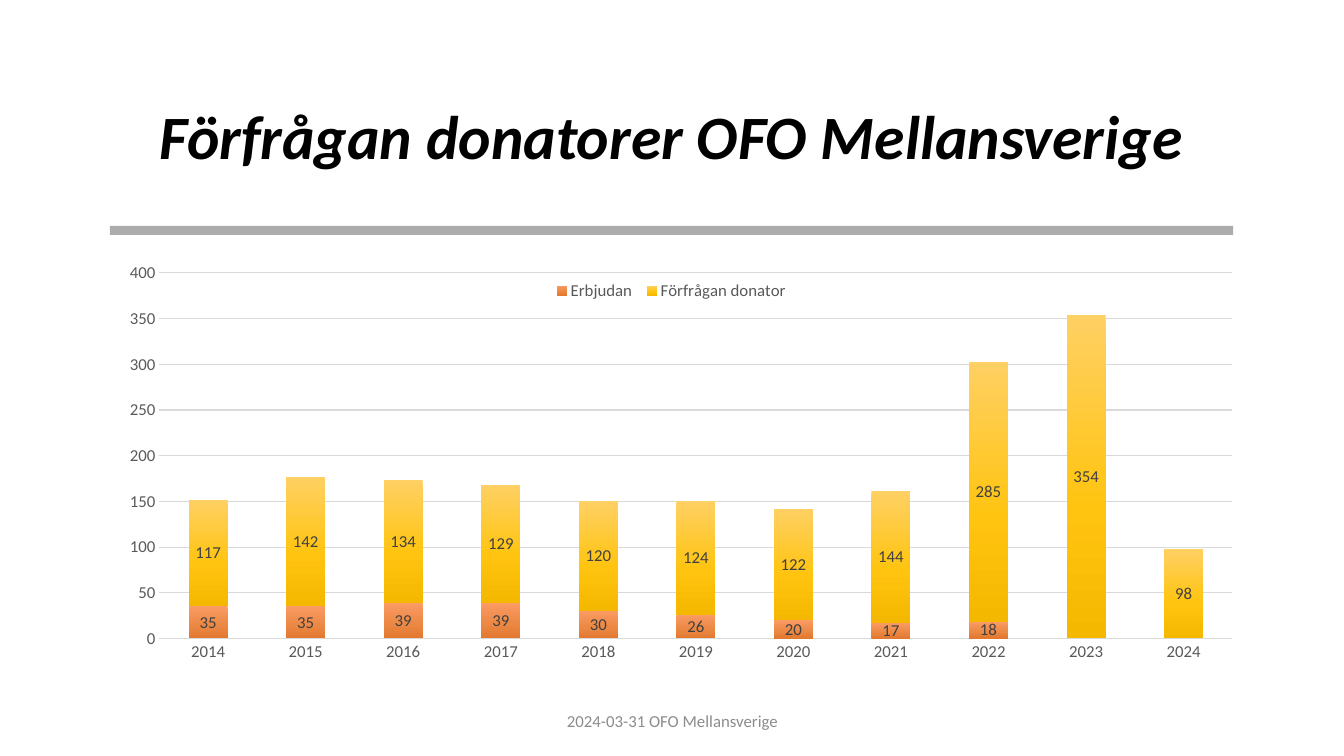
from copy import deepcopy
from dataclasses import dataclass

from lxml.etree import SubElement
from pptx import Presentation
from pptx.chart.data import CategoryChartData
from pptx.dml.color import RGBColor
from pptx.enum.chart import XL_CHART_TYPE as ChartType
from pptx.enum.chart import XL_LABEL_POSITION as LabelPosition
from pptx.enum.chart import XL_LEGEND_POSITION as LegendPosition
from pptx.enum.chart import XL_TICK_MARK as TickMark
from pptx.enum.shapes import MSO_SHAPE as ShapeType
from pptx.enum.text import MSO_ANCHOR as Anchor
from pptx.enum.text import MSO_AUTO_SIZE as AutoSize
from pptx.enum.text import PP_ALIGN as Align
from pptx.oxml import parse_xml
from pptx.oxml.ns import nsdecls, qn
from pptx.util import Inches, Pt

WIDTH, HEIGHT = Inches(13.33), Inches(7.5)
FONT = "Calibri"
GRID_COLOR, AXIS_TEXT, LABEL_TEXT = "D9D9D9", "595959", "404040"
YEARS = [str(year) for year in range(2014, 2025)]


@dataclass(frozen=True)
class Area:
    left: float
    top: float
    width: float
    height: float

    def on_slide(self) -> tuple[int, int, int, int]:
        return (int(self.left * WIDTH), int(self.top * HEIGHT),
                int(self.width * WIDTH), int(self.height * HEIGHT))


@dataclass(frozen=True)
class Stack:
    name: str
    values: tuple
    gradient: tuple[tuple[float, str], ...]


TITLE_AREA = Area(0.0713, 0.088, 0.8575, 0.1933)
RULE_AREA = Area(0.0818, 0.2987, 0.8357, 0.012)
CHART_AREA = Area(0.0818, 0.348, 0.8357, 0.528)
FOOTER_AREA = Area(0.3316, 0.9267, 0.3376, 0.0533)
PLOT_AREA = Area(0.044, 0.018, 0.956, 0.923)
LEGEND_AREA = Area(0.39, 0.03, 0.22, 0.065)

STACKS = [
    Stack("Erbjudan", (35, 35, 39, 39, 30, 26, 20, 17, 18, None, None),
          ((0, "FB9B64"), (0.6, "EB8844"), (1, "E3782F"))),
    Stack("Förfrågan donator", (117, 142, 134, 129, 120, 124, 122, 144, 285, 354, 98),
          ((0, "FFD063"), (0.6, "FFC410"), (1, "F5B800"))),
]


def color(value: str) -> RGBColor:
    return RGBColor.from_string(value)


def style_font(font, size: float, value: str, strong: bool = False) -> None:
    font.name = FONT
    font.size = Pt(size)
    font.color.rgb = color(value)
    font.bold = font.italic = strong


def write_text(shape, area: Area, text: str, size: float, value: str, strong: bool = False):
    shape.left, shape.top, shape.width, shape.height = area.on_slide()
    frame = shape.text_frame
    frame.text = text
    frame.word_wrap = True
    frame.auto_size = AutoSize.NONE
    frame.vertical_anchor = Anchor.MIDDLE
    paragraph = frame.paragraphs[0]
    paragraph.alignment = Align.CENTER
    style_font(paragraph.runs[0].font, size, value, strong)
    return paragraph


def add_rule(slide) -> None:
    rule = slide.shapes.add_shape(ShapeType.RECTANGLE, *RULE_AREA.on_slide())
    rule.shadow.inherit = False
    rule.fill.solid()
    rule.fill.fore_color.rgb = color("808080")
    rule.line.fill.background()
    solid = rule.fill._xPr.find(qn("a:solidFill"))
    SubElement(solid[0], qn("a:alpha"), val="65000")


def manual_layout(area: Area, target: str = ""):
    parts = [("xMode", "edge"), ("yMode", "edge"), ("x", area.left),
             ("y", area.top), ("w", area.width), ("h", area.height)]
    if target:
        parts.insert(0, ("layoutTarget", target))
    inner = "".join(f'<c:{tag} val="{value}"/>' for tag, value in parts)
    return parse_xml(f'<c:layout {nsdecls("c")}><c:manualLayout>{inner}'
                     "</c:manualLayout></c:layout>")


def place_plot(chart) -> None:
    plot_area = chart._chartSpace.find(".//" + qn("c:plotArea"))
    for layout in plot_area.findall(qn("c:layout")):
        plot_area.remove(layout)
    plot_area.insert(0, manual_layout(PLOT_AREA, "inner"))


def style_legend(chart) -> None:
    chart.has_legend = True
    legend = chart.legend
    legend.position = LegendPosition.TOP
    legend.include_in_layout = False
    style_font(legend.font, 12, AXIS_TEXT)
    element = legend._element
    for layout in element.findall(qn("c:layout")):
        element.remove(layout)
    element.find(qn("c:legendPos")).addnext(manual_layout(LEGEND_AREA))


def style_axes(chart) -> None:
    for axis in (chart.category_axis, chart.value_axis):
        axis.major_tick_mark = axis.minor_tick_mark = TickMark.NONE
        style_font(axis.tick_labels.font, 12, AXIS_TEXT)
    category_line = chart.category_axis.format.line
    category_line.color.rgb = color(GRID_COLOR)
    category_line.width = Pt(1)
    values = chart.value_axis
    values.minimum_scale, values.maximum_scale, values.major_unit = 0, 400, 50
    values.format.line.fill.background()
    values.has_major_gridlines = True
    grid_line = values.major_gridlines.format.line
    grid_line.color.rgb = color(GRID_COLOR)
    grid_line.width = Pt(0.75)


def style_series(series, stack: Stack) -> None:
    fill = series.format.fill
    fill.gradient()
    fill.gradient_angle = 270
    stop_list = series._element.find(".//" + qn("a:gsLst"))
    while len(stop_list) < len(stack.gradient):
        stop_list.append(deepcopy(stop_list[0]))
    for stop, (position, value) in zip(fill.gradient_stops, stack.gradient):
        stop.position = position
        stop.color.rgb = color(value)
    labels = series.data_labels
    labels.show_value = True
    labels.position = LabelPosition.CENTER
    style_font(labels.font, 12, LABEL_TEXT)


def add_donor_chart(slide) -> None:
    data = CategoryChartData()
    data.categories = YEARS
    for stack in STACKS:
        data.add_series(stack.name, stack.values)
    frame = slide.shapes.add_chart(ChartType.COLUMN_STACKED, *CHART_AREA.on_slide(), data)
    chart = frame.chart
    chart.has_title = False
    style_font(chart.font, 10, "000000")
    plot = chart.plots[0]
    plot.gap_width, plot.overlap = 150, 100
    plot.vary_by_categories = False
    for series, stack in zip(plot.series, STACKS):
        style_series(series, stack)
    style_axes(chart)
    style_legend(chart)
    place_plot(chart)


def main() -> None:
    presentation = Presentation()
    presentation.slide_width, presentation.slide_height = WIDTH, HEIGHT
    slide = presentation.slides.add_slide(presentation.slide_layouts.get_by_name("Title Only"))
    title = write_text(slide.shapes.title, TITLE_AREA,
                       "Förfrågan donatorer OFO Mellansverige", 44, "000000", True)
    title.line_spacing = 0.9
    add_rule(slide)
    footer_box = slide.shapes.add_textbox(*FOOTER_AREA.on_slide())
    footer = write_text(footer_box, FOOTER_AREA, "2024-03-31 OFO Mellansverige", 12, "8C8C8C")
    footer.space_after = Pt(6)
    add_donor_chart(slide)
    presentation.save("out.pptx")


if __name__ == "__main__":
    main()
